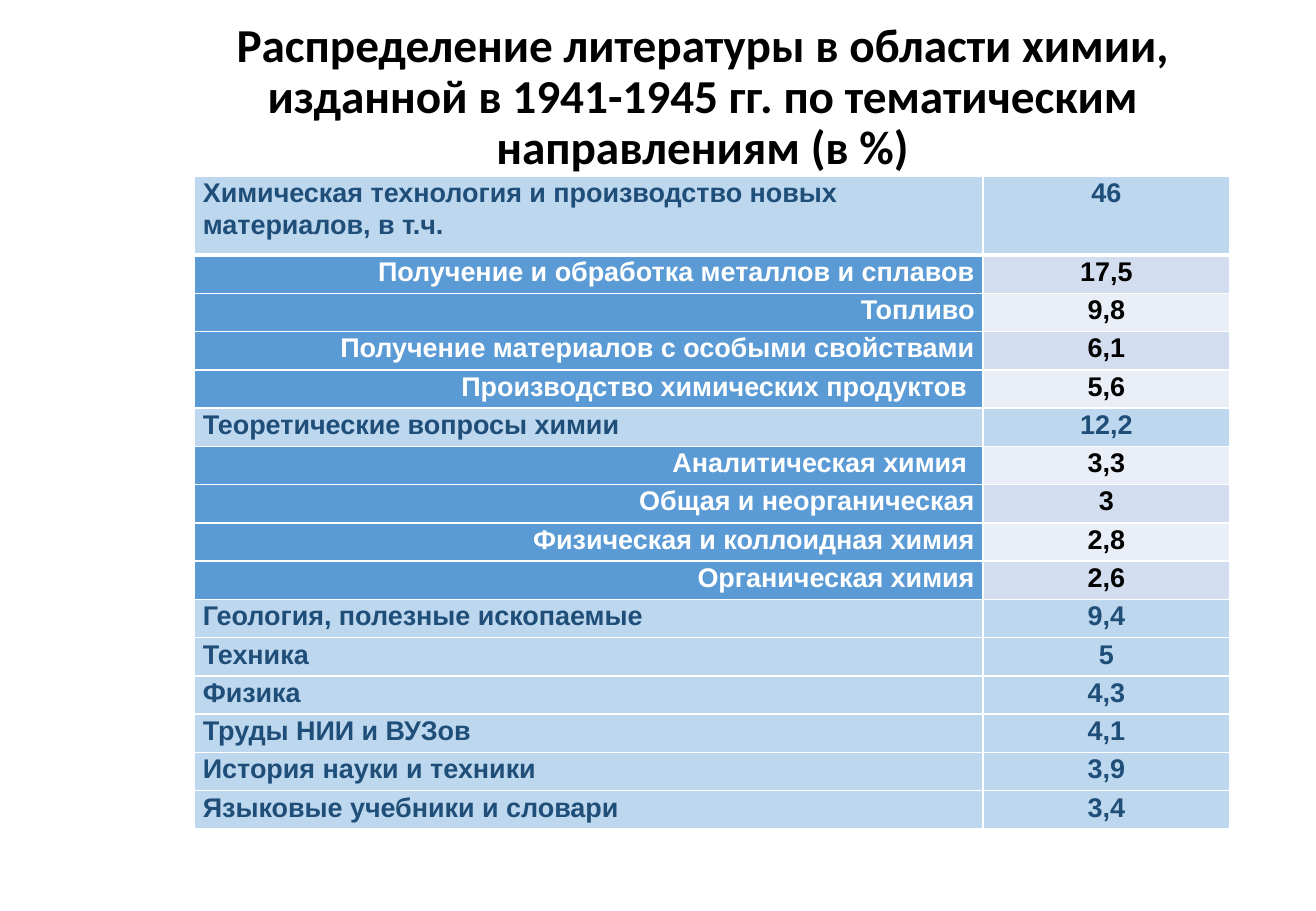
from lxml import etree
from pptx import Presentation
from pptx.dml.color import RGBColor
from pptx.enum.text import MSO_ANCHOR, PP_ALIGN
from pptx.oxml.ns import qn
from pptx.util import Pt

LEFT, MID, RIGHT = PP_ALIGN.LEFT, PP_ALIGN.CENTER, PP_ALIGN.RIGHT
CENTRE = MSO_ANCHOR.MIDDLE

TITLE = "Распределение литературы в области химии, изданной в 1941-1945 гг. по тематическим направлениям (в %)"
GROUPS = [
    ("Химическая технология и производство новых материалов, в т.ч.", "46", [
        ("Получение и обработка металлов и сплавов", "17,5"),
        ("Топливо", "9,8"),
        ("Получение материалов с особыми свойствами", "6,1"),
        ("Производство химических продуктов ", "5,6"),
    ]),
    ("Теоретические вопросы химии", "12,2", [
        ("Аналитическая химия ", "3,3"),
        ("Общая и неорганическая", "3"),
        ("Физическая и коллоидная химия", "2,8"),
        ("Органическая химия", "2,6"),
    ]),
    ("Геология, полезные ископаемые", "9,4", []),
    ("Техника", "5", []),
    ("Физика", "4,3", []),
    ("Труды НИИ и ВУЗов", "4,1", []),
    ("История науки и техники", "3,9", []),
    ("Языковые учебники и словари", "3,4", []),
]

THEME = {
    "black": "000000", "white": "FFFFFF", "navy": "1F4E79",
    "main": "BDD7EE", "sub": "5B9BD5", "bands": ("EAEFF7", "D2DEEF"),
    "head": {"name": "Calibri", "size": Pt(28), "bold": True},
    "body": {"name": "Arial", "size": Pt(16), "bold": True},
}
SLIDE = (779.76, 540)
HEAD_BOX = (80, 23, 672.5, 70)
GRID = (115.2, 104.4)
COLS = (467.3, 146.1)
FIRST, ROW = 46.8, 22.7
THIN, THICK = 1, 3


def apply(obj, vals):
    for key, val in vals.items():
        setattr(obj, key, val)


def write(frame, text, font, color, align, gap):
    para = frame.paragraphs[0]
    apply(para, {"alignment": align, "line_spacing": gap})
    run = para.add_run()
    run.text = text
    apply(run.font, font)
    run.font.color.rgb = RGBColor.from_string(color)


def edge(cell, side, width):
    line = etree.SubElement(cell._tc.get_or_add_tcPr(), qn("a:ln" + side), w=str(Pt(width)))
    fill = etree.SubElement(line, qn("a:solidFill"))
    etree.SubElement(fill, qn("a:srgbClr"), val=THEME["white"])


def paint(cell, text, fill, color, align, top, base):
    pad = Pt(5)
    apply(cell, {"margin_left": pad, "margin_right": pad, "margin_top": 0, "margin_bottom": 0})
    for side, width in zip("LRTB", (THIN, THIN, top, base)):
        edge(cell, side, width)
    cell.fill.solid()
    cell.fill.fore_color.rgb = RGBColor.from_string(fill)
    write(cell.text_frame, text, THEME["body"], color, align, 1.07)


def main():
    deck = Presentation()
    apply(deck, {"slide_width": Pt(SLIDE[0]), "slide_height": Pt(SLIDE[1])})
    slide = deck.slides.add_slide(deck.slide_layouts[6])

    frame = slide.shapes.add_textbox(*map(Pt, HEAD_BOX)).text_frame
    apply(frame, {"word_wrap": True, "vertical_anchor": CENTRE})
    write(frame, TITLE, THEME["head"], THEME["black"], MID, 0.9)

    rows = []
    for name, share, parts in GROUPS:
        rows.append((name, share, True))
        rows += [(*part, False) for part in parts]

    high = FIRST + ROW * (len(rows) - 1)
    size = (*GRID, sum(COLS), high)
    table = slide.shapes.add_table(len(rows), len(COLS), *map(Pt, size)).table
    for col, width in zip(table.columns, COLS):
        col.width = Pt(width)

    for i, (name, share, main_row) in enumerate(rows):
        table.rows[i].height = Pt(ROW if i else FIRST)
        if main_row:
            looks = [(THEME["main"], THEME["navy"], LEFT), (THEME["main"], THEME["navy"], MID)]
        else:
            looks = [(THEME["sub"], THEME["white"], RIGHT),
                     (THEME["bands"][i % 2], THEME["black"], MID)]
        top = THICK if i == 1 else THIN
        base = THICK if i == 0 else THIN
        for j, text in enumerate((name, share)):
            paint(table.cell(i, j), text, *looks[j], top, base)

    deck.save("out.pptx")


if __name__ == "__main__":
    main()
